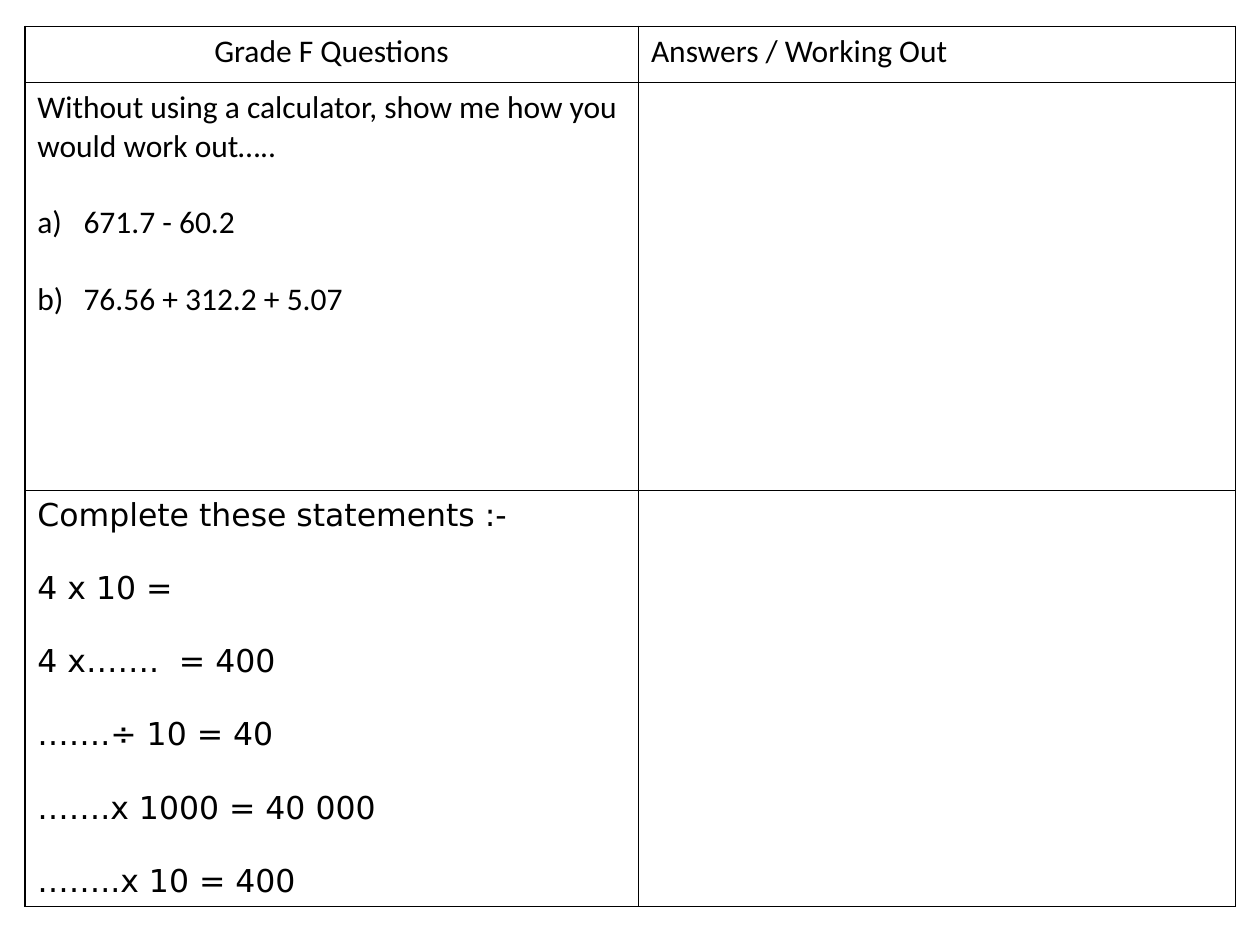
from lxml.etree import SubElement
from pptx import Presentation
from pptx.dml.color import RGBColor
from pptx.enum.text import PP_ALIGN as Align
from pptx.oxml.ns import qn
from pptx.util import Cm, Pt

BLACK = "000000"
COLUMN_WIDTHS = [12.37, 12.04]
ROW_HEIGHTS = [1.13, 8.23, 8.36]
LIST_INDENT = Cm(0.93)

HEADINGS = ["Grade F Questions", "Answers / Working Out"]
CALCULATIONS = [
    "Without using a calculator, show me how you would work out…..",
    "a)\t671.7 - 60.2",
    "b)\t76.56 + 312.2 + 5.07",
]
STATEMENTS = [
    "Complete these statements :-",
    "4 x 10 =",
    "4 x…….  = 400",
    "…….÷ 10 = 40",
    "…….x 1000 = 40 000",
    "……..x 10 = 400",
]


def color(hex_string):
    return RGBColor.from_string(hex_string)


def style_cell(cell):
    """Give the cell thin black borders and no fill."""
    properties = cell._tc.get_or_add_tcPr()
    for side in ("lnL", "lnR", "lnT", "lnB"):
        line = SubElement(properties, qn(f"a:{side}"), w=str(Pt(1)))
        fill = SubElement(line, qn("a:solidFill"))
        SubElement(fill, qn("a:srgbClr"), val=BLACK)
    cell.fill.background()


def write_cell(cell, lines, font_name="Calibri", gap=0, align=Align.LEFT):
    """Write one paragraph per line, gap points apart; a tab makes a list item."""
    cell.text_frame.text = "\n".join(lines)
    for index, paragraph in enumerate(cell.text_frame.paragraphs):
        paragraph.alignment = align
        paragraph.space_before = Pt(gap if index else 0)
        if "\t" in lines[index]:
            properties = paragraph._p.get_or_add_pPr()
            properties.set("marL", str(LIST_INDENT))
            properties.set("indent", str(-LIST_INDENT))
        for run in paragraph.runs:
            run.font.name = font_name
            run.font.size = Pt(18)
            run.font.bold = False
            run.font.color.rgb = color(BLACK)


def add_worksheet(slide, left, top):
    shape = slide.shapes.add_table(
        len(ROW_HEIGHTS), len(COLUMN_WIDTHS), left, top,
        Cm(sum(COLUMN_WIDTHS)), Cm(sum(ROW_HEIGHTS)))
    table = shape.table
    table.first_row = table.horz_banding = False
    for column, width in zip(table.columns, COLUMN_WIDTHS):
        column.width = Cm(width)
    for row, height in zip(table.rows, ROW_HEIGHTS):
        row.height = Cm(height)
    for cell in table.iter_cells():
        style_cell(cell)

    write_cell(table.cell(0, 0), HEADINGS[:1], align=Align.CENTER)
    write_cell(table.cell(0, 1), HEADINGS[1:])
    write_cell(table.cell(1, 0), CALCULATIONS, gap=22)
    write_cell(table.cell(2, 0), STATEMENTS, font_name="DejaVu Sans", gap=21)


def main():
    presentation = Presentation()
    presentation.slide_width = Cm(25.4)
    presentation.slide_height = Cm(19.05)
    slide = presentation.slides.add_slide(presentation.slide_layouts[6])
    add_worksheet(slide, Cm(0.5), Cm(0.53))
    presentation.save("out.pptx")


if __name__ == "__main__":
    main()
